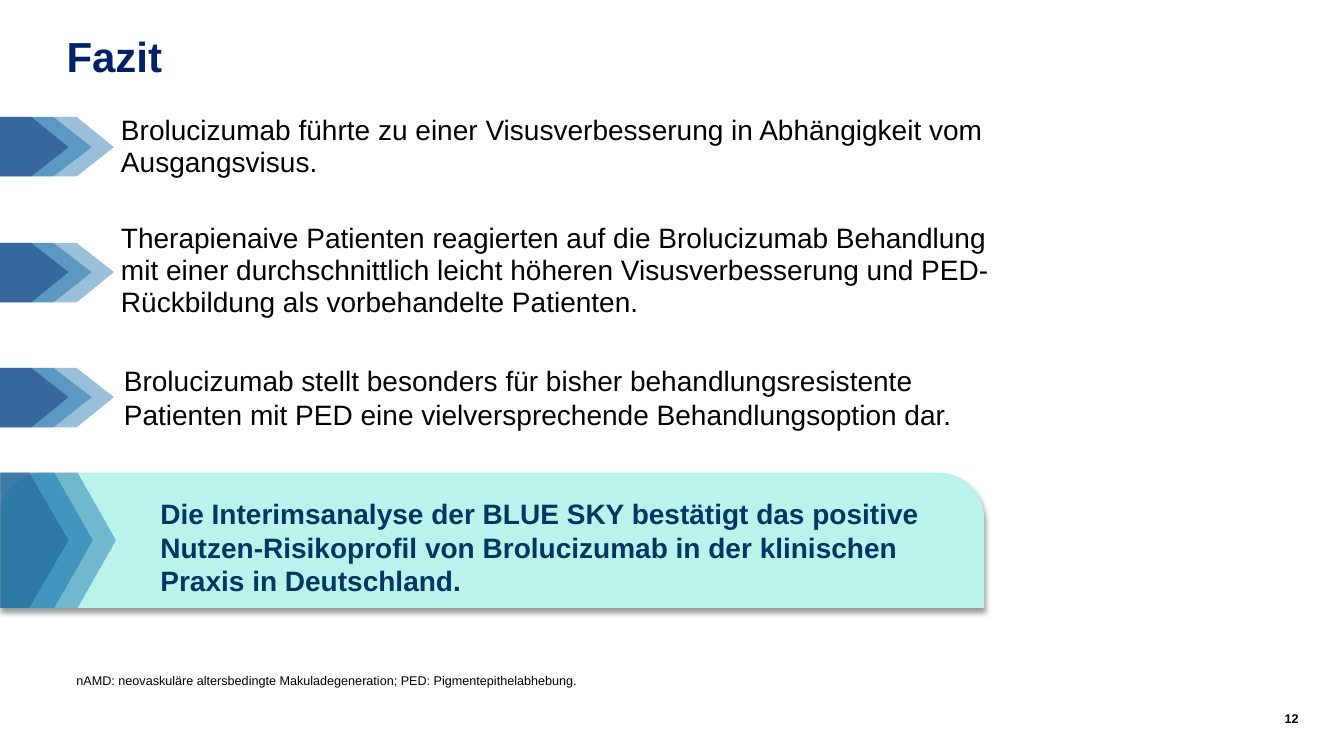
"""Build the closing slide with three findings and a highlighted conclusion."""
from dataclasses import dataclass
from typing import NamedTuple

from lxml.etree import SubElement
from pptx import Presentation
from pptx.dml.color import RGBColor
from pptx.enum.shapes import MSO_SHAPE as Preset
from pptx.enum.text import MSO_ANCHOR as Anchor, MSO_AUTO_SIZE as AutoSize, PP_ALIGN as Align
from pptx.oxml.ns import qn
from pptx.shapes.autoshape import Shape
from pptx.slide import Slide
from pptx.util import Pt

PX = 9144


@dataclass(frozen=True)
class Theme:
    font: str = "Arial"
    navy: str = "002068"
    ink: str = "000000"
    mint: str = "B9F3EC"
    petrol: str = "023761"
    blue: str = "0060A1"
    banner_blue: str = "0061A2"
    banner_navy: str = "1B416A"
    title_size: int = 30
    text_size: int = 20
    note_size: int = 9
    opacity: int = 40


class Box(NamedTuple):
    left: int
    top: int
    width: int
    height: int


class Insets(NamedTuple):
    left: int = 0
    top: int = 0
    right: int = 0
    bottom: int = 0


class Chevron(NamedTuple):
    left: int
    shoulder: int
    tip: int
    color: str


@dataclass(frozen=True)
class Style:
    size: int
    color: str
    bold: bool = False
    align: Align = Align.LEFT
    anchor: Anchor = Anchor.TOP
    insets: Insets = Insets()
    line_spacing: float = 0.95


@dataclass(frozen=True)
class Finding:
    text: str
    box: Box
    arrow_top: int
    style: Style


THEME = Theme()
FRAME = Insets(10, 5, 10, 5)
FINDING_STYLE = Style(THEME.text_size, THEME.ink)
ARROW_HEIGHT = 59
BANNER = Box(0, 469, 976, 134)

FINDING_ARROWS = [
    Chevron(-392, 53, 91, THEME.blue),
    Chevron(-370, 76, 113, THEME.blue),
    Chevron(-415, 31, 68, THEME.navy),
]
BANNER_ARROWS = [
    Chevron(0, 77, 115, THEME.banner_blue),
    Chevron(-2, 29, 68, THEME.banner_navy),
    Chevron(1, 54, 92, THEME.banner_blue),
]
FINDINGS = [
    Finding("Brolucizumab führte zu einer Visusverbesserung in Abhängigkeit vom Ausgangsvisus.",
            Box(120, 114, 866, 102), 116, FINDING_STYLE),
    Finding("Therapienaive Patienten reagierten auf die Brolucizumab Behandlung mit einer "
            "durchschnittlich leicht höheren Visusverbesserung und PED-Rückbildung als "
            "vorbehandelte Patienten.",
            Box(120, 221, 866, 102), 241, FINDING_STYLE),
    Finding("Brolucizumab stellt besonders für bisher behandlungsresistente Patienten mit PED "
            "eine vielversprechende Behandlungsoption dar.",
            Box(113, 356, 861, 77), 365,
            Style(THEME.text_size, THEME.ink, insets=FRAME, line_spacing=1.0)),
]


def place(shape: Shape, box: Box) -> None:
    shape.left, shape.top, shape.width, shape.height = (length * PX for length in box)


def write(shape: Shape, text: str, style: Style) -> None:
    frame = shape.text_frame
    frame.word_wrap = True
    frame.auto_size = AutoSize.NONE
    frame.vertical_anchor = style.anchor
    frame.margin_left, frame.margin_top, frame.margin_right, frame.margin_bottom = (
        inset * PX for inset in style.insets)
    paragraph = frame.paragraphs[0]
    properties = paragraph._p.get_or_add_pPr()
    properties.set("marL", "0")
    properties.set("indent", "0")
    SubElement(properties, qn("a:buNone"))
    paragraph.alignment = style.align
    paragraph.line_spacing = style.line_spacing
    paragraph.space_before = Pt(0)
    run = paragraph.add_run()
    run.text = text
    run.font.name = THEME.font
    run.font.size = Pt(style.size)
    run.font.bold = style.bold
    run.font.color.rgb = RGBColor.from_string(style.color)


def add_text(slide: Slide, text: str, box: Box, style: Style) -> None:
    write(slide.shapes.add_textbox(*(length * PX for length in box)), text, style)


def paint(shape: Shape, color: str) -> None:
    shape.shadow.inherit = False
    shape.fill.solid()
    shape.fill.fore_color.rgb = RGBColor.from_string(color)
    shape.line.fill.background()


def add_arrows(slide: Slide, arrows: list[Chevron], top: int, height: int) -> None:
    bottom = top + height
    for arrow in arrows:
        outline = slide.shapes.build_freeform(arrow.left, top, scale=PX)
        outline.add_line_segments([
            (arrow.shoulder, top), (arrow.tip, top + height / 2),
            (arrow.shoulder, bottom), (arrow.left, bottom)])
        chevron = outline.convert_to_shape()
        paint(chevron, arrow.color)
        tint = chevron._element.spPr.find(qn("a:solidFill"))[0]
        SubElement(tint, qn("a:alpha"), val=str(THEME.opacity * 1000))


def add_banner(slide: Slide, text: str) -> None:
    banner = slide.shapes.add_shape(
        Preset.ROUND_2_SAME_RECTANGLE, *(length * PX for length in BANNER))
    banner.adjustments[0] = 0.334
    banner.adjustments[1] = 0
    paint(banner, THEME.mint)
    effects = banner._element.spPr.find(qn("a:effectLst"))
    shadow = SubElement(effects, qn("a:outerShdw"), blurRad=str(Pt(4)), dist=str(Pt(3)),
                        dir="5400000", algn="t", rotWithShape="0")
    shade = SubElement(shadow, qn("a:srgbClr"), val=THEME.ink)
    SubElement(shade, qn("a:alpha"), val=str(THEME.opacity * 1000))
    write(banner, text, Style(THEME.text_size, THEME.petrol, bold=True, anchor=Anchor.MIDDLE,
                              insets=Insets(146, 5, 4, 5), line_spacing=1.0))
    add_arrows(slide, BANNER_ARROWS, BANNER.top, BANNER.height)


def main() -> None:
    deck = Presentation()
    deck.slide_width, deck.slide_height = 1333 * PX, 750 * PX
    slide = deck.slides.add_slide(deck.slide_layouts[1])

    title = slide.shapes.title
    place(title, Box(66, 34, 805, 117))
    write(title, "Fazit", Style(THEME.title_size, THEME.navy, bold=True))

    add_banner(slide, "Die Interimsanalyse der BLUE SKY bestätigt das positive "
                      "Nutzen-Risikoprofil von Brolucizumab in der klinischen Praxis in Deutschland.")

    first, *others = FINDINGS
    body = slide.placeholders[1]
    place(body, first.box)
    write(body, first.text, first.style)
    for finding in others:
        add_text(slide, finding.text, finding.box, finding.style)
    for finding in FINDINGS:
        add_arrows(slide, FINDING_ARROWS, finding.arrow_top, ARROW_HEIGHT)

    add_text(slide, "nAMD: neovaskuläre altersbedingte Makuladegeneration; PED: Pigmentepithelabhebung.",
             Box(66, 624, 930, 64),
             Style(THEME.note_size, THEME.ink, anchor=Anchor.BOTTOM, insets=FRAME))
    add_text(slide, "12", Box(1237, 705, 51, 20),
             Style(THEME.note_size, THEME.ink, bold=True, align=Align.RIGHT, line_spacing=1.0))
    deck.save("out.pptx")


if __name__ == "__main__":
    main()
